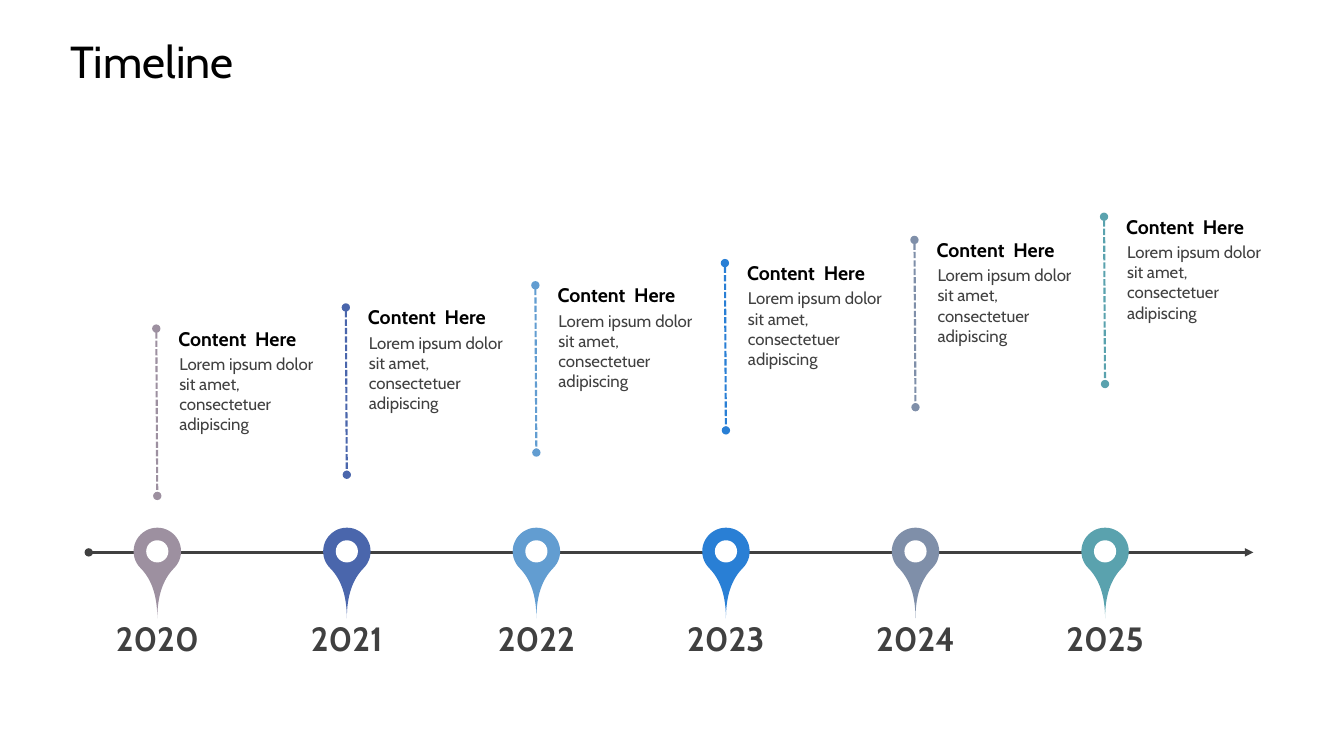
from lxml import etree
from pptx import Presentation
from pptx.dml.color import RGBColor
from pptx.enum.dml import MSO_LINE
from pptx.enum.shapes import MSO_CONNECTOR, MSO_SHAPE
from pptx.enum.text import MSO_ANCHOR, MSO_AUTO_SIZE, PP_ALIGN
from pptx.oxml.ns import qn
from pptx.util import Inches, Pt

STRAIGHT = MSO_CONNECTOR.STRAIGHT
TEARDROP, OVAL = MSO_SHAPE.TEAR, MSO_SHAPE.OVAL
DASH = MSO_LINE.SQUARE_DOT
TOP, MIDDLE = MSO_ANCHOR.TOP, MSO_ANCHOR.MIDDLE
LEFT, CENTER = PP_ALIGN.LEFT, PP_ALIGN.CENTER
GROW = MSO_AUTO_SIZE.SHAPE_TO_FIT_TEXT

FONT = "Cabin"
BLACK, GRAY, WHITE = "000000", "404040", "FFFFFF"
AXIS_TOP = 5.48
FIRST_CENTER, PITCH = 1.56, 1.88
PIN_SIZE, HOLE_SIZE = 0.47, 0.22
HEADING = "Content  Here"
DETAIL = "Lorem ipsum dolor sit amet, consectetuer adipiscing"
MILESTONES = [
    ("2020", "9D90A0", 3.19),
    ("2021", "4A66AC", 2.98),
    ("2022", "629DD1", 2.76),
    ("2023", "297FD5", 2.54),
    ("2024", "7F8FA9", 2.31),
    ("2025", "5AA2AE", 2.08),
]


def color(value):
    return RGBColor.from_string(value)


def add_text(page, left, top, width, height, text, size, ink,
             bold=False, align=LEFT, anchor=TOP, inset=(0.1, 0.05)):
    box = page.shapes.add_textbox(Inches(left), Inches(top), Inches(width), Inches(height))
    frame = box.text_frame
    frame.word_wrap = True
    frame.vertical_anchor = anchor
    frame.margin_left = frame.margin_right = Inches(inset[0])
    frame.margin_top = frame.margin_bottom = Inches(inset[1])
    para = frame.paragraphs[0]
    para.text = text
    para.alignment = align
    para.font.name = FONT
    para.font.size = Pt(size)
    para.font.bold = bold
    para.font.color.rgb = color(ink)
    return frame


def add_line(page, start, end, ink, width, tail, dash=None):
    points = [Inches(length) for length in (*start, *end)]
    line = page.shapes.add_connector(STRAIGHT, *points)
    line.line.color.rgb = color(ink)
    line.line.width = Pt(width)
    if dash:
        line.line.dash_style = dash
    outline = line.line._get_or_add_ln()
    etree.SubElement(outline, qn("a:headEnd"), type="oval")
    etree.SubElement(outline, qn("a:tailEnd"), type=tail)
    etree.SubElement(line._element.spPr, qn("a:effectLst"))


def add_centered_shape(page, kind, center, middle, size, fill):
    shape = page.shapes.add_shape(kind, Inches(center - size / 2), Inches(middle - size / 2),
                                  Inches(size), Inches(size))
    shape.shadow.inherit = False
    shape.fill.solid()
    shape.fill.fore_color.rgb = color(fill)
    shape.line.fill.background()
    return shape


def add_title(page, left, top, width, height):
    frame = add_text(page, left, top, width, height, "Timeline", 32, BLACK, anchor=MIDDLE)
    para = frame.paragraphs[0]
    para.line_spacing = 0.9
    para.space_before = Pt(10)


def add_pin(page, center, middle, year, fill):
    drop = add_centered_shape(page, TEARDROP, center, middle, PIN_SIZE, fill)
    drop.adjustments[0] = 2
    drop.rotation = 135
    add_centered_shape(page, OVAL, center, middle, HOLE_SIZE, WHITE)
    label = add_text(page, center - 0.6, middle + 0.66, 1.2, 0.4, year, 24, GRAY,
                     bold=True, align=CENTER, inset=(0, 0))
    label.auto_size = GROW


def add_note(page, center, top, ink):
    detail = add_text(page, center + 0.12, top + 0.27, 1.72, 0.71, DETAIL, 12, GRAY)
    detail.auto_size = GROW
    heading = add_text(page, center + 0.09, top, 1.73, 0.34, HEADING, 14, BLACK,
                       bold=True, inset=(0.12, 0.05))
    heading.auto_size = GROW
    add_line(page, (center - 0.01, top + 0.07), (center, top + 1.73), ink, 1.5, "oval", DASH)


def add_timeline(page, left, right):
    add_line(page, (left, AXIS_TOP), (right, AXIS_TOP), GRAY, 1.75, "triangle")
    for index, (year, ink, note_top) in enumerate(MILESTONES):
        center = FIRST_CENTER + index * PITCH
        add_pin(page, center, AXIS_TOP - 0.01, year, ink)
        add_note(page, center, note_top, ink)


def main():
    deck = Presentation()
    deck.slide_width = Inches(13.33)
    deck.slide_height = Inches(7.5)
    page = deck.slides.add_slide(deck.slide_layouts[6])
    add_title(page, 0.6, 0.24, 12.41, 0.79)
    add_timeline(page, 0.88, 12.43)
    deck.save("out.pptx")


if __name__ == "__main__":
    main()
